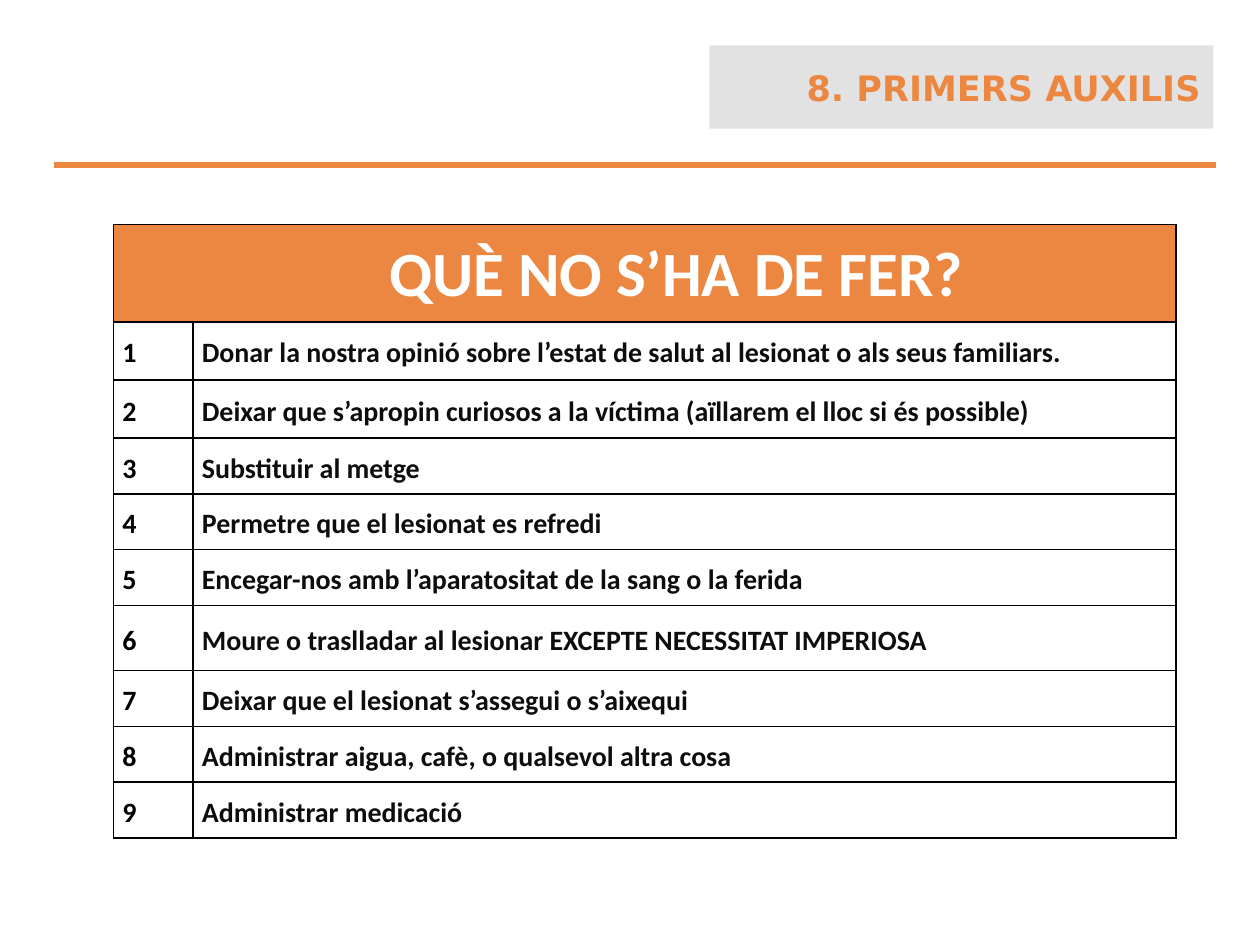
from dataclasses import dataclass

from lxml import etree
from pptx import Presentation
from pptx.dml.color import RGBColor
from pptx.enum import shapes, text
from pptx.oxml.ns import qn
from pptx.util import Pt


@dataclass
class Theme:
    accent: str = "EC8741"
    panel: str = "E2E2E2"
    white: str = "FFFFFF"
    black: str = "000000"
    ink: str = "0D0D0D"
    body: str = "Calibri"
    head: str = "DejaVu Sans"
    title: int = 20
    banner: int = 36
    item: int = 16


def write(frame, words, *, size, color, font, align,
          lead=1.0, before=0, indent=0):
    """Put one formatted paragraph in a text frame."""
    para = frame.paragraphs[0]
    para.text = words
    para.alignment = align
    para.line_spacing = lead
    if before:
        para.space_before = Pt(before)
    if indent:
        para._p.get_or_add_pPr().set("marL", str(Pt(indent)))
    face = para.runs[0].font
    face.name, face.size, face.bold = font, Pt(size), True
    face.color.rgb = RGBColor.from_string(color)


class Deck:
    def __init__(self, theme):
        self.theme = theme
        self.file = Presentation()
        self.file.slide_width, self.file.slide_height = Pt(720), Pt(540)
        self.slide = self.file.slides.add_slide(self.file.slide_layouts[5])

    def title(self, words, x, y, w, h):
        box = self.slide.shapes.title
        box.left, box.top, box.width, box.height = map(Pt, (x, y, w, h))
        box.fill.solid()
        box.fill.fore_color.rgb = RGBColor.from_string(self.theme.panel)
        frame = box.text_frame
        frame.auto_size = text.MSO_AUTO_SIZE.NONE
        frame.vertical_anchor = text.MSO_ANCHOR.MIDDLE
        write(frame, words, size=self.theme.title, color=self.theme.accent,
              font=self.theme.head, align=text.PP_ALIGN.RIGHT)

    def rule(self, x, y, end, width):
        line = self.slide.shapes.add_connector(
            shapes.MSO_CONNECTOR.STRAIGHT, Pt(x), Pt(y), Pt(end), Pt(y))
        line.line.color.rgb = RGBColor.from_string(self.theme.accent)
        line.line.width = Pt(width)
        etree.SubElement(line._element.spPr, qn("a:effectLst"))

    def frame(self, cell, fill=None):
        """Set the margins, borders and fill of a table cell."""
        cell.margin_left = cell.margin_right = Pt(5)
        cell.margin_top = cell.margin_bottom = 0
        props = cell._tc.get_or_add_tcPr()
        for side in ("lnL", "lnR", "lnT", "lnB"):
            edge = etree.SubElement(props, qn("a:" + side), w=str(Pt(1)))
            paint = etree.SubElement(edge, qn("a:solidFill"))
            etree.SubElement(paint, qn("a:srgbClr"), val=self.theme.black)
        if fill:
            cell.fill.solid()
            cell.fill.fore_color.rgb = RGBColor.from_string(fill)
        else:
            cell.fill.background()

    def table(self, banner, items, x, y, cols, rows):
        look = self.theme
        grid = self.slide.shapes.add_table(
            len(rows), len(cols), Pt(x), Pt(y),
            Pt(sum(cols)), Pt(sum(rows))).table
        grid.first_row = grid.horz_banding = False
        for col, width in zip(grid.columns, cols):
            col.width = Pt(width)
        for row, height in zip(grid.rows, rows):
            row.height = Pt(height)

        # Banner across both columns
        top = grid.cell(0, 0)
        top.merge(grid.cell(0, 1))
        for cell in grid.rows[0].cells:
            self.frame(cell, look.accent)
        write(top.text_frame, banner, size=look.banner, color=look.white,
              font=look.body, align=text.PP_ALIGN.CENTER,
              lead=1.15, before=0.8, indent=36)

        # Numbered items
        for num, item in enumerate(items, 1):
            pair = ((str(num), look.black), (item, look.ink))
            for col, (words, color) in enumerate(pair):
                cell = grid.cell(num, col)
                self.frame(cell)
                cell.vertical_anchor = text.MSO_ANCHOR.MIDDLE
                write(cell.text_frame, words, size=look.item, color=color,
                      font=look.body, align=text.PP_ALIGN.JUSTIFY, lead=1.15)


ITEMS = [
    "Donar la nostra opinió sobre l’estat de salut al lesionat o als seus familiars.",
    "Deixar que s’apropin curiosos a la víctima (aïllarem el lloc si és possible)",
    "Substituir al metge",
    "Permetre que el lesionat es refredi",
    "Encegar-nos amb l’aparatositat de la sang o la ferida",
    "Moure o traslladar al lesionar EXCEPTE NECESSITAT IMPERIOSA",
    "Deixar que el lesionat s’assegui o s’aixequi",
    "Administrar aigua, cafè, o qualsevol altra cosa",
    "Administrar medicació",
]


def main():
    deck = Deck(Theme())
    # Heading
    deck.rule(31, 94.3, 695, 3)
    deck.title("8. PRIMERS AUXILIS", 405.4, 26, 288, 47.5)
    # List of things to avoid
    low, mid, high = 31.9, 33.2, 37.2
    rows = [55.6, mid, mid] + [low] * 3 + [high] + [low] * 3
    deck.table("QUÈ NO S’HA DE FER?", ITEMS, 65, 128.3, [45.4, 561.6], rows)
    deck.file.save("out.pptx")


if __name__ == "__main__":
    main()
